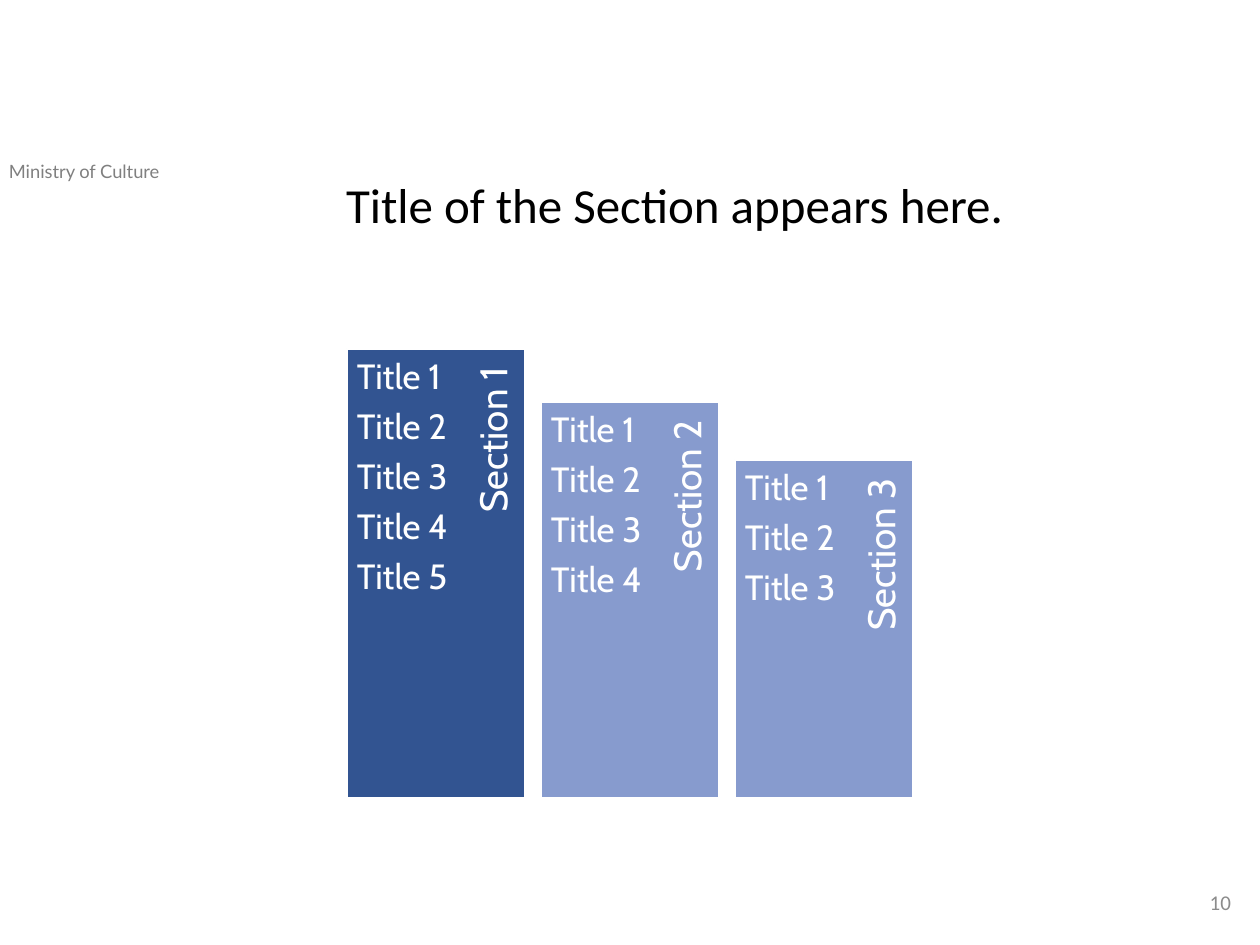
"""Build a section overview slide with three stepped bars."""
from dataclasses import dataclass

from pptx import Presentation
from pptx.dml.color import RGBColor
from pptx.enum.shapes import MSO_SHAPE
from pptx.enum.text import MSO_ANCHOR, MSO_AUTO_SIZE, PP_ALIGN
from pptx.util import Emu, Pt

RECTANGLE = MSO_SHAPE.RECTANGLE
TOP, MIDDLE = MSO_ANCHOR.TOP, MSO_ANCHOR.MIDDLE
LEFT, RIGHT = PP_ALIGN.LEFT, PP_ALIGN.RIGHT
NO_AUTOFIT = MSO_AUTO_SIZE.NONE
PX_PER_INCH = 126


@dataclass(frozen=True)
class Theme:
    white: str = "FFFFFF"
    black: str = "000000"
    header_grey: str = "808080"
    number_grey: str = "8C8C8C"
    dark_blue: str = "325491"
    light_blue: str = "879BCE"
    header_size: float = 10.5
    number_size: int = 12
    item_size: int = 20
    label_size: int = 22
    title_size: int = 28
    item_gap: int = 7
    line_spacing: float = 0.9


theme = Theme()


def px(length):
    return Emu(round(length * 914400 / PX_PER_INCH))


def fill_text(box, lines, font, size, color, align=LEFT, anchor=TOP,
              insets=(13, 6, 13, 6), spacing=1.0, gap=0):
    frame = box.text_frame
    frame.text = "\n".join(lines)
    frame.word_wrap = True
    frame.auto_size = NO_AUTOFIT
    frame.vertical_anchor = anchor
    (frame.margin_left, frame.margin_top,
     frame.margin_right, frame.margin_bottom) = map(px, insets)
    for para in frame.paragraphs:
        para.alignment = align
        para.line_spacing = spacing
        para.space_after = Pt(gap)
        para.font.name = font
        para.font.size = Pt(size)
        para.font.color.rgb = RGBColor.from_string(color)


deck = Presentation()
deck.slide_width, deck.slide_height = px(1260), px(945)
page = deck.slides.add_slide(deck.slide_layouts[5])
shapes = page.shapes

title = shapes.title
title.left, title.top, title.width, title.height = px(333), px(175), px(714), px(100)
fill_text(title, ["Title of the Section appears here."], "Calibri",
          theme.title_size, theme.black, spacing=theme.line_spacing)

header = shapes.add_textbox(px(-4), px(154), px(275), px(35))
fill_text(header, ["Ministry of Culture"], "Lato", theme.header_size, theme.header_grey)

number = shapes.add_textbox(px(960), px(877), px(284), px(50))
fill_text(number, ["10"], "Calibri", theme.number_size, theme.number_grey, RIGHT, MIDDLE)

first_left, bar_step, bar_width, bar_bottom = 347, 194, 178, 798
label_center, label_height = 150, 47
sections = [
    ("Section 1", 349, 5, theme.dark_blue),
    ("Section 2", 402, 4, theme.light_blue),
    ("Section 3", 460, 3, theme.light_blue),
]

for index, (name, top, item_count, color) in enumerate(sections):
    left = first_left + index * bar_step
    height = bar_bottom - top

    bar = shapes.add_shape(RECTANGLE, px(left), px(top), px(bar_width), px(height))
    bar.shadow.inherit = False
    bar.fill.solid()
    bar.fill.fore_color.rgb = RGBColor.from_string(color)
    bar.line.color.rgb = RGBColor.from_string(theme.white)
    bar.line.width = Pt(1)

    label_length = round(height * 0.9)
    label = shapes.add_textbox(
        px(left + label_center - label_length / 2),
        px(top + label_length / 2 - label_height / 2),
        px(label_length), px(label_height))
    label.rotation = 270
    fill_text(label, [name], "Cabin", theme.label_size, theme.white, RIGHT, MIDDLE,
              (11, 0, 18, 4), theme.line_spacing)

    items = shapes.add_textbox(px(left), px(top), px(126), px(height))
    fill_text(items, [f"Title {item + 1}" for item in range(item_count)], "Cabin",
              theme.item_size, theme.white, insets=(10, 10, 10, 10),
              spacing=theme.line_spacing, gap=theme.item_gap)

deck.save("out.pptx")
